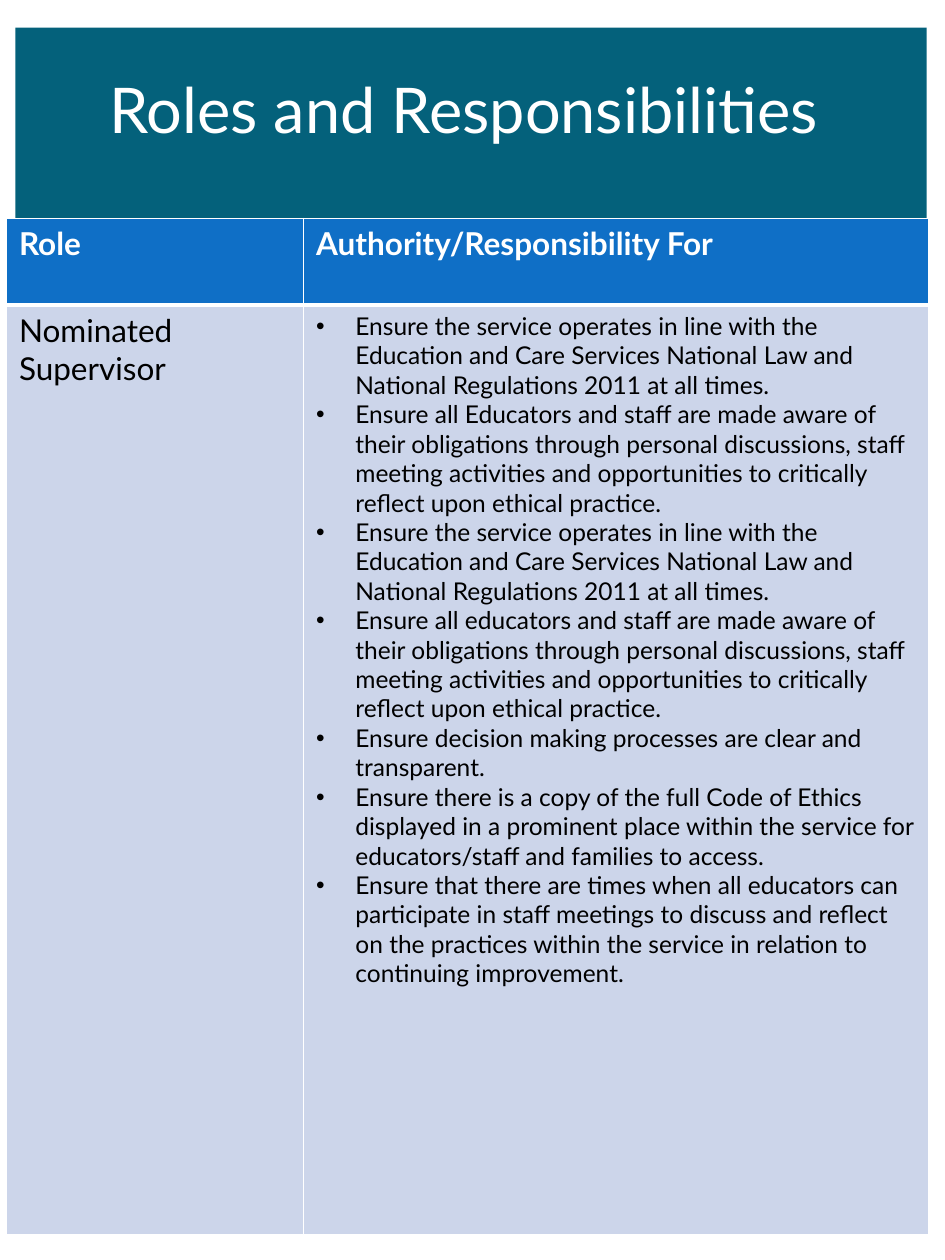
from lxml import etree
from pptx import Presentation
from pptx.dml.color import RGBColor
from pptx.enum.shapes import MSO_SHAPE
from pptx.enum.text import PP_ALIGN
from pptx.oxml.ns import qn
from pptx.util import Cm, Pt

RECT = MSO_SHAPE.RECTANGLE
LEFT, CENTER = PP_ALIGN.LEFT, PP_ALIGN.CENTER
FONT = "Lato"
COLORS = {
    "white": "FFFFFF",
    "black": "000000",
    "banner": "04617B",
    "header": "0F6FC6",
    "body": "CCD5EA",
}
HEADINGS = ["Role", "Authority/Responsibility For"]
ROLE = "Nominated Supervisor"
OPERATES = (
    "Ensure the service operates in line with the Education and Care Services "
    "National Law and National Regulations 2011 at all times."
)
AWARE = (
    "Ensure all {} and staff are made aware of their obligations through personal "
    "discussions, staff meeting activities and opportunities to critically reflect "
    "upon ethical practice."
)
DUTIES = [
    OPERATES,
    AWARE.format("Educators"),
    OPERATES,
    AWARE.format("educators"),
    "Ensure decision making processes are clear and transparent.",
    "Ensure there is a copy of the full Code of Ethics displayed in a prominent place "
    "within the service for educators/staff and families to access.",
    "Ensure that there are times when all educators can participate in staff meetings "
    "to discuss and reflect on the practices within the service in relation to "
    "continuing improvement.",
]


def rgb(name):
    return RGBColor.from_string(COLORS[name])


def write(p, text, size=18, color="black", bold=False, align=LEFT, bullet=False):
    p.alignment = align
    r = p.add_run()
    r.text = text
    r.font.name = FONT
    r.font.size = Pt(size)
    r.font.bold = bold
    r.font.color.rgb = rgb(color)
    if bullet:
        pPr = p._p.get_or_add_pPr()
        pPr.set("marL", str(Cm(0.79)))
        pPr.set("indent", str(-Cm(0.79)))
        etree.SubElement(pPr, qn("a:buFont"), typeface="Arial")
        etree.SubElement(pPr, qn("a:buChar"), char="•")


def add_banner(s):
    sp = s.shapes.add_shape(RECT, Cm(0.31), Cm(0.56), Cm(18.37), Cm(4.98))
    sp.shadow.inherit = False
    sp.fill.solid()
    sp.fill.fore_color.rgb = rgb("banner")
    sp.line.fill.background()


def add_title(s, text):
    tf = s.shapes.add_textbox(Cm(0.91), Cm(1.3), Cm(17.2), Cm(1.8)).text_frame
    tf.word_wrap = True
    write(tf.paragraphs[0], text, size=36, color="white", align=CENTER)


def style_cell(cell, fill, top=1, bottom=1):
    tcPr = cell._tc.get_or_add_tcPr()
    for side, width in (("L", 1), ("R", 1), ("T", top), ("B", bottom)):
        ln = etree.SubElement(tcPr, qn(f"a:ln{side}"), w=str(Pt(width)))
        solid = etree.SubElement(ln, qn("a:solidFill"))
        etree.SubElement(solid, qn("a:srgbClr"), val=COLORS["white"])
    cell.fill.solid()
    cell.fill.fore_color.rgb = rgb(fill)


def add_roles_table(s):
    frame = s.shapes.add_table(2, 2, Cm(0.13), Cm(4.4), Cm(18.59), Cm(20.5))
    table = frame.table
    for col, width in zip(table.columns, (5.99, 12.6)):
        col.width = Cm(width)
    for row, height in zip(table.rows, (1.75, 18.75)):
        row.height = Cm(height)
    for i, heading in enumerate(HEADINGS):
        cell = table.cell(0, i)
        style_cell(cell, "header", bottom=3)
        write(cell.text_frame.paragraphs[0], heading, color="white", bold=True)
        style_cell(table.cell(1, i), "body", top=3)
    write(table.cell(1, 0).text_frame.paragraphs[0], ROLE)
    tf = table.cell(1, 1).text_frame
    for i, duty in enumerate(DUTIES):
        p = tf.add_paragraph() if i else tf.paragraphs[0]
        write(p, duty, size=14, bullet=True)


def main():
    prs = Presentation()
    prs.slide_width, prs.slide_height = Cm(19.05), Cm(25.4)
    s = prs.slides.add_slide(prs.slide_layouts[6])
    add_banner(s)
    add_title(s, "Roles and Responsibilities ")
    add_roles_table(s)
    prs.save("out.pptx")


if __name__ == "__main__":
    main()
